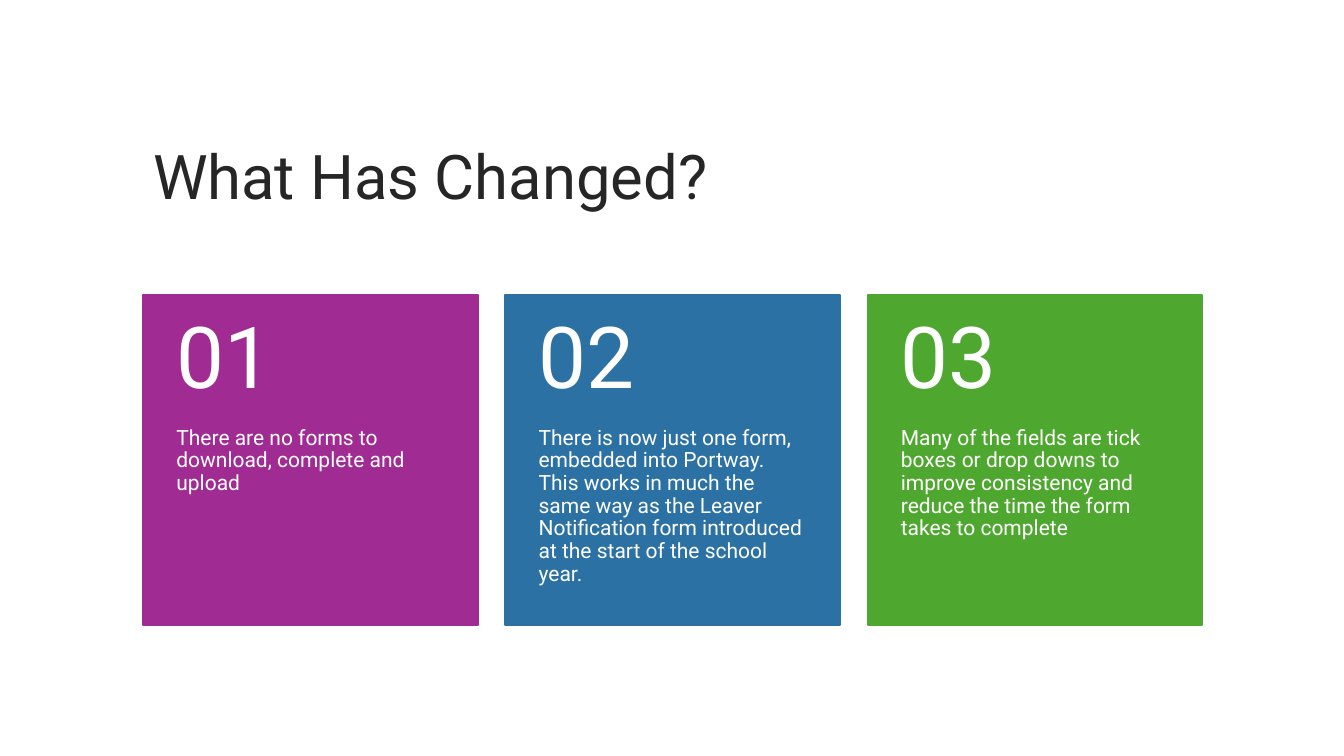
from pptx import Presentation
from pptx.dml.color import RGBColor
from pptx.enum.shapes import MSO_SHAPE
from pptx.enum.text import MSO_ANCHOR, PP_ALIGN
from pptx.util import Pt

RECTANGLE = MSO_SHAPE.RECTANGLE
TOP, MIDDLE = MSO_ANCHOR.TOP, MSO_ANCHOR.MIDDLE
LEFT = PP_ALIGN.LEFT

TITLE = "What Has Changed?"
CHANGES = [
    ("There are no forms to download, complete and upload", "A02B93"),
    ("There is now just one form, embedded into Portway. This works in much "
     "the same way as the Leaver Notification form introduced at the start "
     "of the school year.", "2C71A4"),
    ("Many of the fields are tick boxes or drop downs to improve consistency "
     "and reduce the time the form takes to complete", "4EA72E"),
]

FONT = "Roboto"
INK, WHITE = "262626", "FFFFFF"
MARGIN, CONTENT_WIDTH = 102.24, 756
TITLE_TOP, TITLE_HEIGHT = 77, 103
CARD_TOP, CARD_WIDTH, CARD_HEIGHT = 211, 239, 235.5
NUMBER_HEIGHT = 94
CARD_PITCH = (CONTENT_WIDTH + 0.5 - CARD_WIDTH) / (len(CHANGES) - 1)
TITLE_INSETS = (7.2, 3.6, 7.2, 3.6)
NUMBER_INSETS = (23.75, 13, 23.75, 13)
DETAIL_INSETS = (23.75, 0, 23.75, 26)


def color(value):
    return RGBColor.from_string(value)


def add_text(slide, text, box, size, ink, anchor, insets):
    frame = slide.shapes.add_textbox(*map(Pt, box)).text_frame
    frame.word_wrap = True
    frame.vertical_anchor = anchor
    (frame.margin_left, frame.margin_top,
     frame.margin_right, frame.margin_bottom) = map(Pt, insets)
    paragraph = frame.paragraphs[0]
    paragraph.text = text
    paragraph.alignment = LEFT
    paragraph.line_spacing = 0.9
    paragraph.font.name = FONT
    paragraph.font.size = Pt(size)
    paragraph.font.color.rgb = color(ink)


def add_card(slide, number, detail, fill, left):
    card = slide.shapes.add_shape(
        RECTANGLE, Pt(left), Pt(CARD_TOP), Pt(CARD_WIDTH), Pt(CARD_HEIGHT))
    card.shadow.inherit = False
    card.fill.solid()
    card.fill.fore_color.rgb = color(fill)
    card.line.color.rgb = color(fill)
    card.line.width = Pt(1.5)
    detail_box = (left, CARD_TOP + NUMBER_HEIGHT,
                  CARD_WIDTH, CARD_HEIGHT - NUMBER_HEIGHT)
    number_box = (left, CARD_TOP, CARD_WIDTH, NUMBER_HEIGHT)
    add_text(slide, detail, detail_box, 15, WHITE, TOP, DETAIL_INSETS)
    add_text(slide, f"{number:02}", number_box, 61, WHITE, MIDDLE, NUMBER_INSETS)


def main():
    deck = Presentation()
    deck.slide_width, deck.slide_height = Pt(960), Pt(540)
    slide = deck.slides.add_slide(deck.slide_layouts[6])
    title_box = (MARGIN, TITLE_TOP, CONTENT_WIDTH, TITLE_HEIGHT)
    add_text(slide, TITLE, title_box, 44, INK, MIDDLE, TITLE_INSETS)
    for index, (detail, fill) in enumerate(CHANGES):
        add_card(slide, index + 1, detail, fill, MARGIN + index * CARD_PITCH)
    deck.save("out.pptx")


if __name__ == "__main__":
    main()
